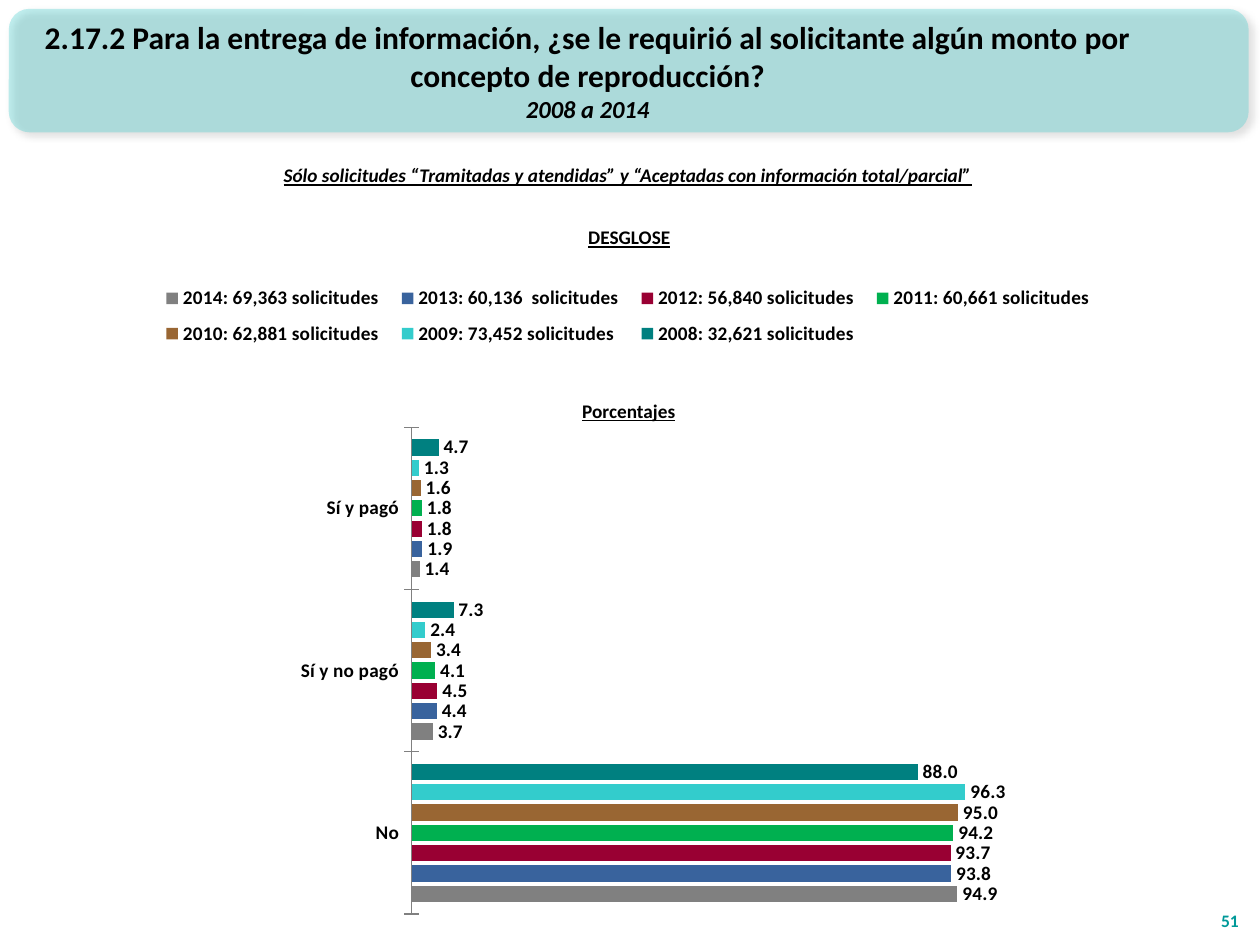
from lxml import etree
from pptx import Presentation
from pptx.chart.data import CategoryChartData as Data
from pptx.dml.color import RGBColor as RGB
from pptx.enum.chart import XL_CHART_TYPE as Kind, XL_LABEL_POSITION as Spot
from pptx.enum.chart import XL_LEGEND_POSITION as Side, XL_TICK_MARK as Tick
from pptx.enum.shapes import MSO_SHAPE as Form
from pptx.enum.text import MSO_ANCHOR as Anchor, PP_ALIGN as Align
from pptx.oxml import parse_xml
from pptx.oxml.ns import nsdecls, qn
from pptx.util import Inches, Pt


def style(font, size, color="000000", italic=None, under=None):
    font.name, font.size, font.bold = "Calibri", Pt(size), True
    font.italic, font.underline = italic, under
    font.color.rgb = RGB.from_string(color)


def layout(x, y, w, h, inner=False):
    target = '<c:layoutTarget val="inner"/>' if inner else ""
    return parse_xml(
        f'<c:layout {nsdecls("c")}><c:manualLayout>{target}'
        '<c:xMode val="edge"/><c:yMode val="edge"/>'
        f'<c:x val="{x}"/><c:y val="{y}"/><c:w val="{w}"/><c:h val="{h}"/>'
        '</c:manualLayout></c:layout>')


prs = Presentation()
prs.slide_width, prs.slide_height = Inches(10), Inches(7.5)
slide = prs.slides.add_slide(prs.slide_layouts[5])
shapes = slide.shapes

band = shapes.add_shape(Form.ROUNDED_RECTANGLE, Inches(0.07), Inches(0.07),
                        Inches(9.84), Inches(0.98))
band.fill.solid()
band.fill.fore_color.rgb = RGB.from_string("33CCCC")
band.line.fill.background()
tint = band.fill._xPr.find(qn("a:solidFill"))[0]
etree.SubElement(tint, qn("a:alpha")).set("val", "30000")
band._element.spPr.append(parse_xml(
    f'<a:effectLst {nsdecls("a")}><a:outerShdw blurRad="50800" dist="38100" '
    'dir="2700000" algn="tl" rotWithShape="0"><a:srgbClr val="000000">'
    '<a:alpha val="40000"/></a:srgbClr></a:outerShdw></a:effectLst>'))

title = shapes.title
title.left, title.top = Inches(0.08), Inches(0.09)
title.width, title.height = Inches(9.17), Inches(0.94)
shapes._spTree.append(title._element)
frame = title.text_frame
frame.text = ("2.17.2 Para la entrega de información, ¿se le requirió al solicitante "
              "algún monto por concepto de reproducción?\n2008 a 2014")
frame.vertical_anchor = Anchor.MIDDLE
for para, size, slant in zip(frame.paragraphs, (18, 14), (False, True)):
    para.alignment = Align.CENTER
    para.space_before = Pt(0)
    style(para.font, size, italic=slant)

data = Data(number_format="0.0")
data.categories = ["Sí y pagó", "Sí y no pagó", "No"]
rows = [
    ("2008: 32,621 solicitudes", (4.7, 7.3, 88.0), "008080"),
    ("2009: 73,452 solicitudes", (1.3, 2.4, 96.3), "33CCCC"),
    ("2010: 62,881 solicitudes", (1.6, 3.4, 95.0), "996633"),
    ("2011: 60,661 solicitudes", (1.8, 4.1, 94.2), "00B050"),
    ("2012: 56,840 solicitudes", (1.8, 4.5, 93.7), "990033"),
    ("2013: 60,136  solicitudes", (1.9, 4.4, 93.8), "39639D"),
    ("2014: 69,363 solicitudes", (1.4, 3.7, 94.9), "808080"),
]
for name, vals, color in rows:
    data.add_series(name, vals)
chart = shapes.add_chart(Kind.BAR_CLUSTERED, Inches(0.95), Inches(2.02),
                         Inches(8.07), Inches(5.42), data).chart
chart.has_title = False
style(chart.font, 11)

chart.has_legend = True
legend = chart.legend
legend.position = Side.TOP
legend.include_in_layout = False
style(legend.font, 11)
legend._element.find(qn("c:legendPos")).addnext(layout(0.03, 0.03, 0.94, 0.12))

area = chart._chartSpace.chart.plotArea
for old in area.findall(qn("c:layout")):
    area.remove(old)
area.insert(0, layout(0.287, 0.253, 0.679, 0.713, inner=True))

cat = chart.category_axis
cat.reverse_order = True
cat.major_tick_mark = Tick.CROSS
cat.format.line.color.rgb = RGB.from_string("808080")
style(cat.tick_labels.font, 11)
val = chart.value_axis
val.visible = False
val.has_major_gridlines = False
val.minimum_scale, val.maximum_scale = 0, 120

plot = chart.plots[0]
plot.gap_width, plot.overlap = 150, -25
plot.vary_by_categories = False
for series, (name, vals, color) in zip(plot.series, rows):
    series.format.fill.solid()
    series.format.fill.fore_color.rgb = RGB.from_string(color)
    marks = series.data_labels
    marks.show_value = True
    marks.number_format, marks.number_format_is_linked = "0.0", False
    marks.position = Spot.OUTSIDE_END
    style(marks.font, 11)

notes = [
    ("Sólo solicitudes “Tramitadas y atendidas” y “Aceptadas con información "
     "total/parcial”", 0.7, 1.25, 8.57, True),
    ("DESGLOSE", 4.18, 1.74, 1.63, None),
    ("Porcentajes", 4.13, 3.12, 1.72, None),
]
for text, x, y, w, slant in notes:
    box = shapes.add_textbox(Inches(x), Inches(y), Inches(w), Inches(0.29))
    box.text_frame.word_wrap = True
    para = box.text_frame.paragraphs[0]
    para.text, para.alignment = text, Align.CENTER
    style(para.font, 11, italic=slant, under=True)

page = shapes.add_textbox(Inches(9.53), Inches(7.04), Inches(0.4), Inches(0.4))
page.text_frame.word_wrap = True
page.text_frame.vertical_anchor = Anchor.BOTTOM
para = page.text_frame.paragraphs[0]
para.text, para.alignment = "51", Align.RIGHT
style(para.font, 10, "009999")

prs.save("out.pptx")
